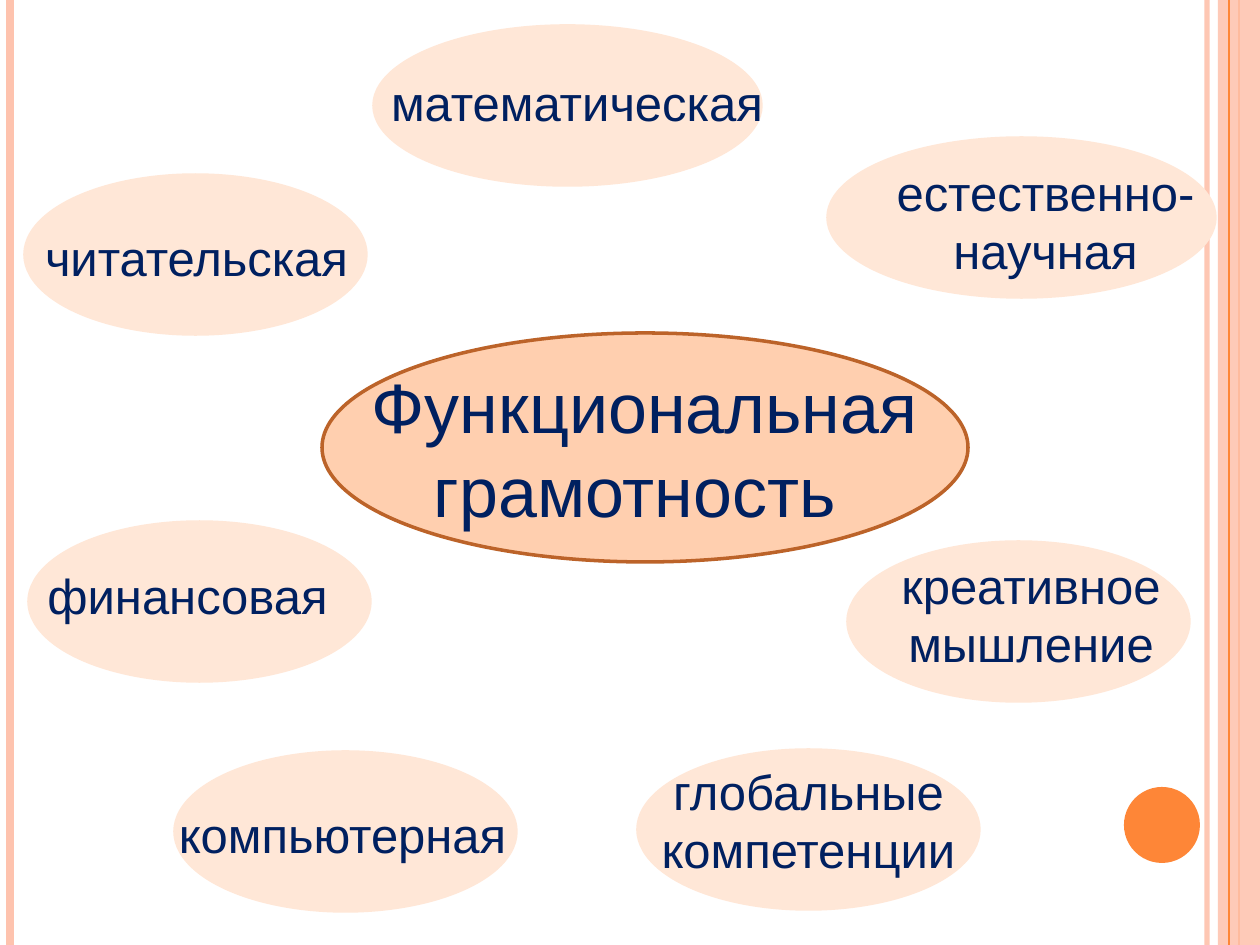
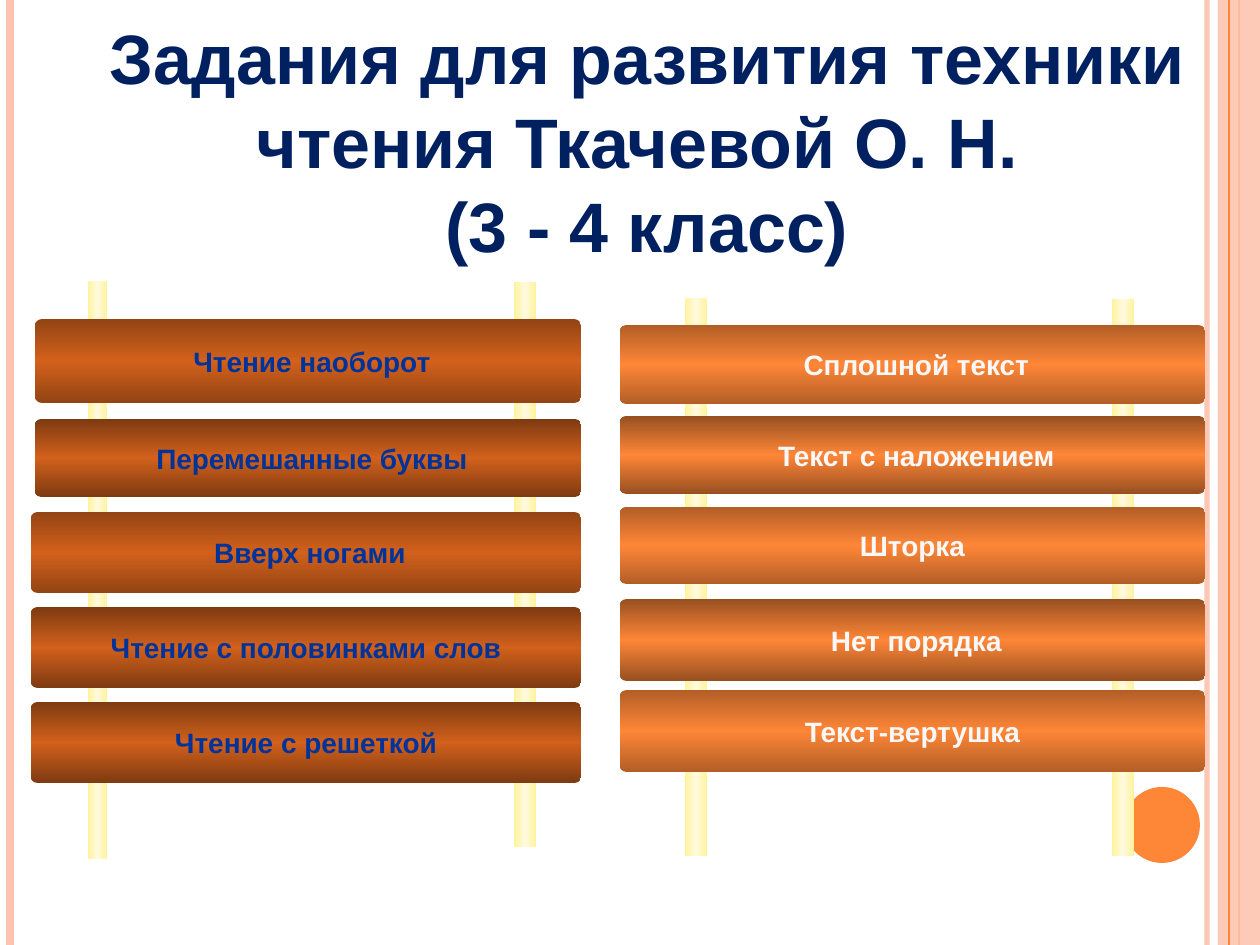
from copy import deepcopy

from lxml.etree import SubElement
from pptx import Presentation
from pptx.dml.color import RGBColor
from pptx.enum.shapes import MSO_CONNECTOR, MSO_SHAPE
from pptx.enum.text import MSO_ANCHOR, MSO_AUTO_SIZE, PP_ALIGN
from pptx.oxml.ns import qn
from pptx.util import Pt

PX = 914400 / 126
SLIDE_W, SLIDE_H = 1260, 945
FONT = "Arial"

ORANGE = RGBColor(0xFE, 0x86, 0x37)
SALMON = RGBColor(0xFE, 0xC3, 0xAE)
NAVY = RGBColor(0x00, 0x20, 0x60)
BLUE = RGBColor(0x00, 0x33, 0x99)
OFF_WHITE = RGBColor(0xF8, 0xF8, 0xF8)
PEACH = RGBColor(0xFF, 0xCF, 0xAF)
PALE_PEACH = RGBColor(0xFF, 0xE7, 0xD7)
RUST = RGBColor(0xBC, 0x63, 0x29)
POST_EDGE = RGBColor(0xFF, 0xF3, 0x9D)
POST_MIDDLE = RGBColor(0xFF, 0xFA, 0xDF)
BROWN = RGBColor(0xD2, 0x61, 0x1C)
BROWN_SHADE = RGBColor(0x93, 0x44, 0x14)
BROWN_DARK = RGBColor(0x7E, 0x3A, 0x11)
ORANGE_SHADE = RGBColor(0xB2, 0x5E, 0x27)
ORANGE_DARK = RGBColor(0x98, 0x50, 0x21)

# Ellipse box, then label box, for each kind of literacy
LITERACIES = [
    ("читательская", (25, 175, 341, 159), (30, 221, 333, 72)),
    ("математическая", (374, 26, 387, 159), (376, 66, 402, 72)),
    ("естественно-научная", (828, 138, 387, 159), (828, 156, 435, 131)),
    ("финансовая", (29, 522, 341, 159), (33, 559, 309, 72)),
    ("компьютерная", (175, 752, 341, 159), (164, 798, 357, 72)),
    ("глобальные компетенции", (638, 750, 341, 159), (600, 755, 417, 131)),
    ("креативное мышление", (848, 542, 341, 159), (856, 549, 350, 131)),
]

# Text, left, top, height and edge colour of each plank
LEFT_PLANKS = [
    (" Чтение наоборот", 35, 319, 84, BROWN_SHADE),
    (" Перемешанные буквы", 35, 419, 78, BROWN_DARK),
    (" Вверх ногами", 31, 512, 81, BROWN_SHADE),
    ("Чтение с половинками слов", 31, 607, 81, BROWN_DARK),
    ("Чтение с решеткой", 31, 702, 81, BROWN_DARK),
]
RIGHT_PLANKS = [
    (" Сплошной текст", 620, 325, 79, ORANGE_SHADE),
    (" Текст с наложением", 620, 416, 78, ORANGE_DARK),
    ("Шторка", 620, 507, 77, ORANGE_SHADE),
    (" Нет порядка", 620, 599, 82, ORANGE_DARK),
    ("Текст-вертушка", 620, 690, 82, ORANGE_SHADE),
]


def emu(*lengths):
    return [round(length * PX) for length in lengths]


def set_opacity(part, percent):
    color = part._element.spPr.find(".//" + qn("a:srgbClr"))
    SubElement(color, qn("a:alpha")).set("val", str(percent * 1000))


def add_figure(shapes, preset, box, fill=None, outline=None):
    figure = shapes.add_shape(preset, *emu(*box))
    figure.shadow.inherit = False
    if fill is not None:
        figure.fill.solid()
        figure.fill.fore_color.rgb = fill
    if outline is None:
        figure.line.fill.background()
    else:
        figure.line.color.rgb = outline
        figure.line.width = Pt(2)
    return figure


def fill_gradient(figure, edge, middle, angle):
    """Fill with a gradient that runs edge, middle, edge."""
    figure.fill.gradient()
    figure.fill.gradient_angle = angle
    first, second = figure.fill.gradient_stops
    first.color.rgb, second.color.rgb = edge, middle
    second.position = 0.5
    stops = figure._element.spPr.find(".//" + qn("a:gsLst"))
    last = deepcopy(stops[0])
    last.set("pos", "100000")
    stops.append(last)


def write_lines(frame, lines, size, color, bold=False):
    for number, line in enumerate(lines):
        paragraph = frame.add_paragraph() if number else frame.paragraphs[0]
        paragraph.alignment = PP_ALIGN.CENTER
        paragraph.line_spacing = Pt(size * 1.2)
        run = paragraph.add_run()
        run.text = line
        run.font.name, run.font.size = FONT, Pt(size)
        run.font.bold = bold
        run.font.color.rgb = color


def add_label(slide, text, box, size):
    frame = slide.shapes.add_textbox(*emu(*box)).text_frame
    frame.word_wrap = True
    frame.auto_size = MSO_AUTO_SIZE.SHAPE_TO_FIT_TEXT
    write_lines(frame, [text], size, NAVY)


def add_stripe(slide, x, color, width):
    stripe = slide.shapes.add_connector(
        MSO_CONNECTOR.STRAIGHT, *emu(x, 0, x, SLIDE_H))
    stripe.line.color.rgb = color
    stripe.line.width = Pt(width)
    SubElement(stripe._element.spPr, qn("a:effectLst"))
    return stripe


def add_frame(slide):
    """Edge stripes, right band and corner disc shared by the slides."""
    set_opacity(add_stripe(slide, 1207, SALMON, 3), 93)
    add_stripe(slide, 10, SALMON, 4.5)
    add_stripe(slide, 1239, ORANGE, 1.5)
    band = add_figure(slide.shapes, MSO_SHAPE.RECTANGLE,
                      (1218, 0, SLIDE_W - 1218, SLIDE_H), SALMON)
    set_opacity(band, 87)
    add_stripe(slide, 1229, ORANGE, 0.75)
    add_figure(slide.shapes, MSO_SHAPE.OVAL, (1124, 787, 76, 76), ORANGE)


def add_ladder(slide, posts, planks, width_end, middle, text_color):
    """Two upright posts with planks that end at one right edge."""
    ladder = slide.shapes.add_group_shape().shapes
    for box in posts:
        post = add_figure(ladder, MSO_SHAPE.RECTANGLE, box)
        fill_gradient(post, POST_EDGE, POST_MIDDLE, 0)
    for text, left, top, height, edge in planks:
        plank = add_figure(ladder, MSO_SHAPE.ROUNDED_RECTANGLE,
                           (left, top, width_end - left, height))
        plank.adjustments[0] = 0.08
        fill_gradient(plank, edge, middle, 90)
        frame = plank.text_frame
        frame.word_wrap = False
        frame.vertical_anchor = MSO_ANCHOR.MIDDLE
        write_lines(frame, [text], 16, text_color, bold=True)


def build_literacy_slide(prs):
    slide = prs.slides.add_slide(prs.slide_layouts[6])
    add_frame(slide)
    # Central idea
    add_figure(slide.shapes, MSO_SHAPE.OVAL, (322, 333, 646, 229), PEACH, RUST)
    add_label(slide, "Функциональная грамотность ", (353, 357, 583, 183), 40)
    # Kinds of literacy around it
    for name, ellipse, label in LITERACIES:
        add_figure(slide.shapes, MSO_SHAPE.OVAL, ellipse, PALE_PEACH, PALE_PEACH)
        add_label(slide, name, label, 28)


def build_tasks_slide(prs):
    slide = prs.slides.add_slide(prs.slide_layouts[5])
    add_frame(slide)
    # Title
    title = slide.shapes.title
    title.left, title.top, title.width, title.height = emu(88, 77, 1118, 127)
    frame = title.text_frame
    frame.auto_size = MSO_AUTO_SIZE.NONE
    frame.word_wrap = True
    frame.vertical_anchor = MSO_ANCHOR.MIDDLE
    write_lines(frame, ["Задания для развития техники чтения Ткачевой О. Н. ",
                        "(3 - 4 класс)"], 40, NAVY, bold=True)
    # Task lists
    add_ladder(slide, [(514, 282, 22, 565), (88, 281, 19, 578)],
               LEFT_PLANKS, 581, BROWN, BLUE)
    add_ladder(slide, [(1112, 299, 22, 557), (685, 298, 22, 558)],
               RIGHT_PLANKS, 1205, ORANGE, OFF_WHITE)


def main():
    prs = Presentation()
    prs.slide_width, prs.slide_height = emu(SLIDE_W, SLIDE_H)
    build_literacy_slide(prs)
    build_tasks_slide(prs)
    prs.save("out.pptx")


if __name__ == "__main__":
    main()
